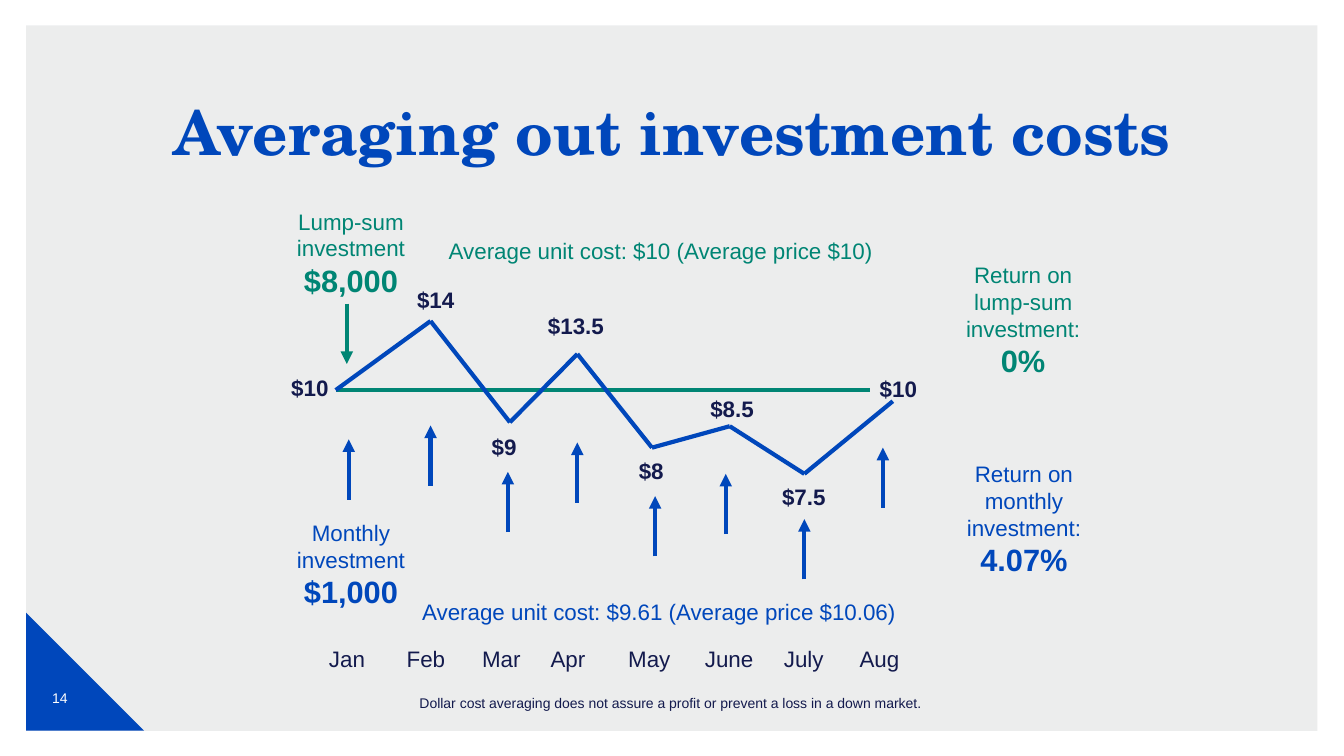
"""Build the slide on averaging out investment costs."""
from itertools import pairwise

from lxml import etree
from pptx import Presentation
from pptx.dml.color import RGBColor
from pptx.enum.shapes import MSO_CONNECTOR, MSO_SHAPE
from pptx.enum.text import MSO_ANCHOR, MSO_AUTO_SIZE, PP_ALIGN
from pptx.oxml.ns import qn
from pptx.util import Cm, Pt

STRAIGHT = MSO_CONNECTOR.STRAIGHT
RECTANGLE = MSO_SHAPE.RECTANGLE
TRIANGLE = MSO_SHAPE.RIGHT_TRIANGLE
MIDDLE = MSO_ANCHOR.MIDDLE
TOP = MSO_ANCHOR.TOP
GROW = MSO_AUTO_SIZE.SHAPE_TO_FIT_TEXT
FIXED = MSO_AUTO_SIZE.NONE
LEFT = PP_ALIGN.LEFT
CENTER = PP_ALIGN.CENTER

BLUE = RGBColor(0x00, 0x47, 0xBB)
GREEN = RGBColor(0x00, 0x85, 0x74)
NAVY = RGBColor(0x13, 0x1A, 0x4D)
GREY = RGBColor(0xD0, 0xD3, 0xD4)
WHITE = RGBColor(0xFF, 0xFF, 0xFF)

BODY_FONT = "Arial"
TITLE_FONT = "TeX Gyre Schola"
ARROW_LENGTH = 1.52

# month, label left, price point, arrow tip, price, price label corner
MONTHS = [
    ("Jan", 7.87, (8.46, 9.83), (8.79, 11.07), "$10", (7.09, 9.3)),
    ("Feb", 9.86, (10.85, 8.09), (10.85, 10.72), "$14", (10.26, 7.09)),
    ("Mar", 11.76, (12.85, 10.64), (12.8, 11.89), "$9", (12.14, 10.8)),
    ("Apr", 13.44, (14.55, 8.92), (14.55, 11.15), "$13.5", (13.56, 7.75)),
    ("May", 15.49, (16.43, 11.28), (16.51, 12.5), "$8", (15.85, 11.4)),
    ("June", 17.5, (18.39, 10.74), (18.29, 11.94), "$8.5", (17.65, 9.83)),
    ("July", 19.38, (20.27, 11.94), (20.27, 13.08), "$7.5", (19.46, 12.04)),
    ("Aug", 21.29, (22.5, 10.11), (22.25, 11.28), "$10", (21.92, 9.32)),
]

AMOUNTS = [
    ("Lump-sum investment ", "$8,000", (7.09, 5.11, 3.51, 2.57), GREEN),
    ("Monthly investment ", "$1,000", (7.09, 12.95, 3.51, 2.57), BLUE),
    ("Return on lump-sum investment: ", "0%", (23.6, 6.45, 4.37, 3.25), GREEN),
    ("Return on monthly investment: ", "4.07%", (23.62, 11.48, 4.37, 3.25), BLUE),
]


def add_block(slide, kind, box, color, opacity=100):
    """Add a filled shape without an outline."""
    sp = slide.shapes.add_shape(kind, *map(Cm, box))
    sp.shadow.inherit = False
    sp.line.fill.background()
    sp.fill.solid()
    sp.fill.fore_color.rgb = color
    if opacity < 100:
        clr = sp.fill._xPr.find(qn("a:solidFill"))[0]
        etree.SubElement(clr, qn("a:alpha"), val=str(opacity * 1000))


def add_line(slide, start, end, color, arrow=False):
    """Add a straight line, with an arrowhead at its end if wanted."""
    cxn = slide.shapes.add_connector(STRAIGHT, *map(Cm, (*start, *end)))
    cxn.line.color.rgb = color
    cxn.line.width = Pt(3)
    if arrow:
        etree.SubElement(cxn.line._get_or_add_ln(), qn("a:tailEnd"), type="triangle")
    etree.SubElement(cxn._element.spPr, qn("a:effectLst"))


def add_text(slide, box, text, color, size=16, bold=False, align=CENTER,
             font=BODY_FONT, anchor=TOP):
    """Add a wrapped text box of one paragraph and return its frame."""
    tf = slide.shapes.add_textbox(*map(Cm, box)).text_frame
    tf.word_wrap = True
    tf.auto_size = GROW
    tf.vertical_anchor = anchor
    tf.text = text
    p = tf.paragraphs[0]
    p.alignment = align
    format_run(p.runs[0], color, size, bold, font)
    return tf


def format_run(r, color, size, bold, font=BODY_FONT):
    """Set the font of a run."""
    r.font.name = font
    r.font.size = Pt(size)
    r.font.bold = bold
    r.font.color.rgb = color


def add_heading(slide, box, text, color, **style):
    """Add a tightly spaced line of text without side margins."""
    tf = add_text(slide, box, text, color, **style)
    tf.auto_size = FIXED
    tf.margin_left = tf.margin_right = 0
    tf.paragraphs[0].line_spacing = 0.9


def add_amount(slide, label, amount, box, color):
    """Add a label that ends in a large bold amount."""
    tf = add_text(slide, box, label, color)
    r = tf.paragraphs[0].add_run()
    r.text = amount
    format_run(r, color, 22, True)


def main():
    """Build and save the slide."""
    prs = Presentation()
    prs.slide_width, prs.slide_height = Cm(33.87), Cm(19.05)
    slide = prs.slides.add_slide(prs.slide_layouts[6])

    add_block(slide, RECTANGLE, (0.66, 0.64, 32.54, 17.78), GREY, 40)
    add_block(slide, TRIANGLE, (0.66, 15.44, 2.97, 2.97), BLUE)
    tf = add_text(slide, (0.81, 16.84, 1.4, 1.47), "14", WHITE, size=10, anchor=MIDDLE)
    tf.auto_size = FIXED

    add_line(slide, (8.46, 9.83), (21.92, 9.83), GREEN)
    for start, end in pairwise(month[2] for month in MONTHS):
        add_line(slide, start, end, BLUE)
    add_line(slide, (8.74, 7.65), (8.74, 9.17), GREEN, arrow=True)

    for month, left, _, (x, y), price, corner in MONTHS:
        add_line(slide, (x, y + ARROW_LENGTH), (x, y), BLUE, arrow=True)
        add_text(slide, (left, 16.13, 1.75, 0.94), month, NAVY)
        add_text(slide, (*corner, 2.03, 0.94), price, NAVY, bold=True, align=LEFT)

    for label, amount, box, color in AMOUNTS:
        add_amount(slide, label, amount, box, color)

    add_text(slide, (10.39, 14.96, 12.98, 0.94),
             "Average unit cost: $9.61 (Average price $10.06)", BLUE, align=LEFT)
    add_heading(slide, (10.26, 5.92, 12.78, 0.86),
                "Average unit cost: $10 (Average price $10)", GREEN)
    add_text(slide, (6.96, 17.37, 19.86, 0.69),
             "Dollar cost averaging does not assure a profit or prevent a loss "
             "in a down market.", NAVY, size=10)
    add_heading(slide, (3.28, 2.46, 27.33, 3.25), "Averaging out investment costs",
                BLUE, size=44, bold=True, font=TITLE_FONT)
    prs.save("out.pptx")


if __name__ == "__main__":
    main()
